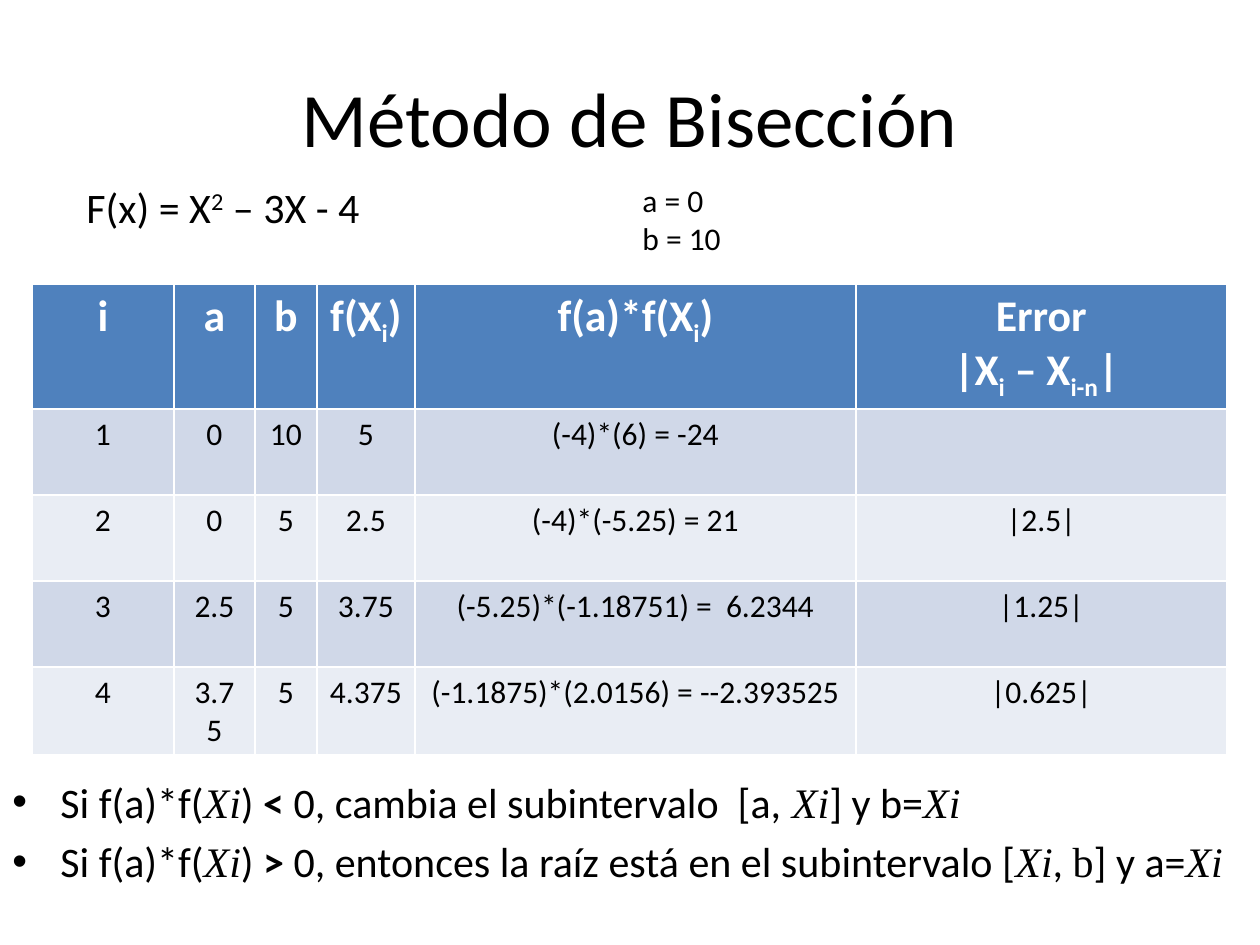
from pptx import Presentation
from pptx import util as u
from pptx.dml.color import RGBColor
from pptx.enum import text
from lxml import etree

BLACK = RGBColor(0x00, 0x00, 0x00)
WHITE = RGBColor(0xFF, 0xFF, 0xFF)
BLUE = RGBColor(0x4F, 0x81, 0xBD)
BANDS = [RGBColor(0xD0, 0xD8, 0xE8), RGBColor(0xE9, 0xED, 0xF4)]
SANS, SERIF = "Calibri", "Times New Roman"
LEFT, MID = text.PP_ALIGN.LEFT, text.PP_ALIGN.CENTER
NS = "http://schemas.openxmlformats.org/drawingml/2006/main"

XI = ("Xi", "math")
SUB = ("i", "sub")
TITLE = [["Método de Bisección"]]
FORM = [["F(x) = X", ("2", "sup"), " – 3X - 4"]]
RANGE = [["a = 0"], ["b = 10"]]
RULES = [
    ["Si f(a)*f(", XI, ") ", ("<", "bold"),
     " 0, cambia el subintervalo  [a,", (" Xi", "math"), "] y b=", XI],
    ["Si f(a)*f(", XI, ") ", (">", "bold"),
     " 0, entonces la raíz está en el subintervalo [", XI, ", ",
     ("b", "serif"), "] y a=", XI],
]
HEAD = [
    [["i"]], [["a"]], [["b"]],
    [["f(X", SUB, ")"]],
    [["f(a)*f(X", SUB, ")"]],
    [["Error"], ["|X", SUB, " – X", ("i-n", "sub"), "| "]],
]
BODY = [
    ["1", "0", "10", "5", "(-4)*(6) = -24", ""],
    ["2", "0", "5", "2.5", "(-4)*(-5.25) = 21", "|2.5|"],
    ["3", "2.5", "5", "3.75", "(-5.25)*(-1.18751) =  6.2344", "|1.25|"],
    ["4", "3.75", "5", "4.375", "(-1.1875)*(2.0156) = --2.393525", "|0.625|"],
]
COLS = [142, 81, 62, 98, 441, 371]
ROWS = [124] + [86] * len(BODY)
BASE = {"sub": "-25000", "sup": "30000"}


def px(n):
    return round(n * 914400 / 126)


def write(frame, paras, size, color=BLACK, align=LEFT, bold=False):
    for n, parts in enumerate(paras):
        para = frame.paragraphs[0] if n == 0 else frame.add_paragraph()
        para.alignment = align
        para.font.size = u.Pt(size)
        for part in parts:
            words, kind = (part, "") if isinstance(part, str) else part
            run = para.add_run()
            run.text = words
            font = run.font
            font.size = u.Pt(size)
            font.name = SERIF if kind in ("math", "serif") else SANS
            font.color.rgb = color
            font.bold = bold or kind == "bold"
            font.italic = kind == "math"
            if kind in BASE:
                run._r.get_or_add_rPr().set("baseline", BASE[kind])


def box(slide, place, paras, size, align=LEFT, wrap=True):
    frame = slide.shapes.add_textbox(*map(px, place)).text_frame
    frame.word_wrap = wrap
    write(frame, paras, size, align=align)
    return frame


def bullet(para):
    para.space_before = u.Pt(5)
    props = para._p.get_or_add_pPr()
    props.set("marL", str(px(48)))
    props.set("indent", str(px(-48)))
    etree.SubElement(props, f"{{{NS}}}buFont", typeface="Arial")
    etree.SubElement(props, f"{{{NS}}}buChar", char="•")


def grid(slide):
    size = sum(COLS), sum(ROWS)
    shape = slide.shapes.add_table(len(ROWS), len(COLS), *map(px, (32, 284, *size)))
    table = shape.table
    for col, wide in zip(table.columns, COLS):
        col.width = px(wide)
    for row, high in zip(table.rows, ROWS):
        row.height = px(high)
    for c, paras in enumerate(HEAD):
        cell = table.cell(0, c)
        cell.fill.solid()
        cell.fill.fore_color.rgb = BLUE
        write(cell.text_frame, paras, 25, WHITE, MID, True)
    for r, line in enumerate(BODY):
        for c, words in enumerate(line):
            cell = table.cell(r + 1, c)
            cell.fill.solid()
            cell.fill.fore_color.rgb = BANDS[r % 2]
            write(cell.text_frame, [[words] if words else []], 18, align=MID)


def main():
    deck = Presentation()
    deck.slide_width, deck.slide_height = px(1260), px(945)
    slide = deck.slides.add_slide(deck.slide_layouts[6])
    title = box(slide, (63, 38, 1134, 157), TITLE, 44, MID)
    title.vertical_anchor = text.MSO_ANCHOR.MIDDLE
    grid(slide)
    box(slide, (74, 175, 302, 63), FORM, 24, wrap=False)
    box(slide, (630, 175, 105, 89), RANGE, 18, wrap=False)
    rules = box(slide, (0, 770, 1260, 159), RULES, 24)
    for para in rules.paragraphs:
        bullet(para)
    deck.save("out.pptx")


if __name__ == "__main__":
    main()
